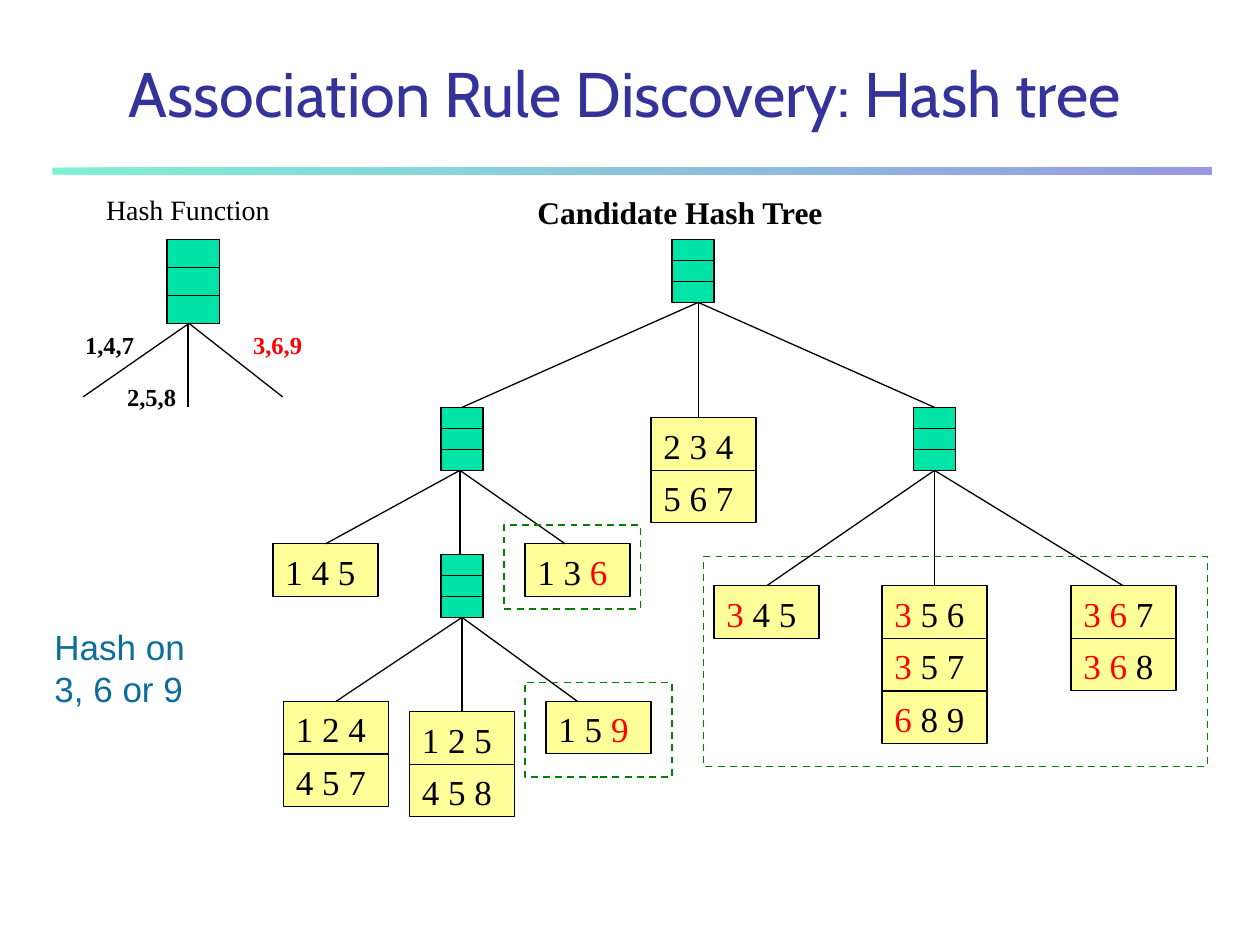
from dataclasses import dataclass
from typing import Optional

from lxml import etree
from pptx import Presentation
from pptx.dml.color import RGBColor
from pptx.enum import dml, shapes as kinds, text as txt
from pptx.oxml import ns
from pptx.util import Pt

BLACK, RED, GREEN, YELLOW = "000000", "FF0000", "00E4A8", "FFFF99"
SERIF = "Times New Roman"
TOP = 136.8  # top of the tree
ROW = 30  # height of one leaf row
UP, DOWN = 0, 2  # connection sites


@dataclass
class Node:
    x: float
    y: float
    w: float = 24
    h: float = 36


@dataclass
class Leaf:
    x: float
    y: float
    rows: list[str]  # text between asterisks is red


@dataclass
class Label:
    x: float
    y: float
    w: float
    h: float
    text: str
    size: float
    bold: bool = False
    font: str = SERIF
    ink: str = BLACK
    wrap: bool = False


@dataclass
class Link:
    start: tuple[float, float]
    end: tuple[float, float]
    head: Optional[str] = None  # box joined at its bottom
    tail: Optional[str] = None  # box joined at its top


NODES = {
    "root": Node(384, TOP),
    "left": Node(252, TOP + 96),
    "right": Node(522, TOP + 96),
    "low": Node(252, TOP + 180),
    "key": Node(95.5, TOP, 30, 48),
}
LEAVES = {
    "234": Leaf(372, TOP + 102, ["2 3 4", "5 6 7"]),
    "145": Leaf(156, TOP + 174, ["1 4 5"]),
    "136": Leaf(300, TOP + 174, ["1 3 *6*"]),
    "345": Leaf(408, TOP + 198, ["*3* 4 5"]),
    "356": Leaf(504, TOP + 198, ["*3* 5 6", "*3* 5 7", "*6* 8 9"]),
    "367": Leaf(612, TOP + 198, ["*3 6* 7", "*3 6* 8"]),
    "124": Leaf(162, TOP + 264, ["1 2 4", "4 5 7"]),
    "125": Leaf(234, TOP + 270, ["1 2 5", "4 5 8"]),
    "159": Leaf(312, TOP + 264, ["1 5 *9*"]),
}
LINKS = [
    Link((399, TOP + 36), (264, TOP + 96), tail="left"),
    Link((399, TOP + 36), (399, TOP + 102)),
    Link((399, TOP + 36), (534, TOP + 96), tail="right"),
    Link((262.8, TOP + 132), (186, TOP + 174), tail="145"),
    Link((262.8, TOP + 132), (262.8, TOP + 180)),
    Link((262.8, TOP + 132), (323, TOP + 174)),
    Link((534, TOP + 132), (438, TOP + 198), "right", "345"),
    Link((534, TOP + 132), (534, TOP + 198), "right", "356"),
    Link((534, TOP + 132), (642, TOP + 198), "right", "367"),
    Link((264, TOP + 216), (192, TOP + 264), "low", "124"),
    Link((264, TOP + 216), (264, TOP + 270), "low", "125"),
    Link((264, TOP + 216), (330, TOP + 264)),
    Link((108, TOP + 48), (47.5, 226.8)),
    Link((107.5, TOP + 48), (107.5, 232.6)),
    Link((108, TOP + 48), (161.5, 226.8)),
]
LABELS = [
    Label(41.5, 185, 42.5, 24, "1,4,7", 14, True),
    Label(65.5, 214.6, 42.5, 24, "2,5,8", 14, True),
    Label(137.5, 185, 42.5, 24, "3,6,9", 14, True, ink=RED),
    Label(53.5, 106.6, 108.7, 26.6, "Hash Function", 16),
    Label(300, 106.6, 179, 29, "Candidate Hash Tree", 18, True),
    Label(24, 354, 90, 55.4, "Hash on 3, 6 or 9", 20, font="Arial", ink="0C6D9C", wrap=True),
]
FRAMES = [(300, 390, 84, 54), (402, 318, 288, 120), (288, 300, 78, 48)]


def rgb(code: str) -> RGBColor:
    return RGBColor.from_string(code)


def style(font, name: str, size: float, ink: Optional[str] = None, bold: bool = False) -> None:
    font.name, font.size, font.bold = name, Pt(size), bold
    if ink:
        font.color.rgb = rgb(ink)


def box(x: float, y: float, w: float, h: float, fill: Optional[str] = None,
        edge: Optional[str] = BLACK, width: float = 0.75):
    rect = slide.shapes.add_shape(kinds.MSO_SHAPE.RECTANGLE, Pt(x), Pt(y), Pt(w), Pt(h))
    rect.shadow.inherit = False
    if fill:
        rect.fill.solid()
        rect.fill.fore_color.rgb = rgb(fill)
    else:
        rect.fill.background()
    if edge:
        rect.line.color.rgb = rgb(edge)
        rect.line.width = Pt(width)
    else:
        rect.line.fill.background()
    return rect


def line(start: tuple[float, float], end: tuple[float, float]):
    wire = slide.shapes.add_connector(
        kinds.MSO_CONNECTOR.STRAIGHT, *(Pt(v) for v in start + end))
    wire.line.color.rgb = rgb(BLACK)
    wire.line.width = Pt(0.75)
    etree.SubElement(wire._element.spPr, ns.qn("a:effectLst"))
    return wire


def draw_node(node: Node):
    rect = box(node.x, node.y, node.w, node.h, GREEN)
    for part in (1, 2):
        y = node.y + node.h * part / 3
        line((node.x, y), (node.x + node.w, y))
    return rect


def draw_leaf(leaf: Leaf):
    rects = []
    for i, row in enumerate(leaf.rows):
        rect = box(leaf.x, leaf.y + i * ROW, 60, ROW, YELLOW)
        frame = rect.text_frame
        frame.word_wrap = False
        frame.vertical_anchor = txt.MSO_ANCHOR.TOP
        para = frame.paragraphs[0]
        para.alignment = txt.PP_ALIGN.LEFT
        style(para.font, SERIF, 20)
        for j, part in enumerate(row.split("*")):
            if part:
                run = para.add_run()
                run.text = part
                run.font.color.rgb = rgb(RED if j % 2 else BLACK)
        rects.append(rect)
    return rects[0]


def draw_label(lab: Label) -> None:
    area = slide.shapes.add_textbox(Pt(lab.x), Pt(lab.y), Pt(lab.w), Pt(lab.h))
    area.text_frame.word_wrap = lab.wrap
    para = area.text_frame.paragraphs[0]
    para.text = lab.text
    style(para.font, lab.font, lab.size, lab.ink, lab.bold)


deck = Presentation()
deck.slide_width, deck.slide_height = Pt(720), Pt(540)
slide = deck.slides.add_slide(deck.slide_layouts[5])

# Title
title = slide.shapes.title
title.left, title.top, title.width, title.height = Pt(30), Pt(30), Pt(654), Pt(48)
title.text_frame.text = "Association Rule Discovery: Hash tree"
title.text_frame.auto_size = txt.MSO_AUTO_SIZE.NONE
title.text_frame.vertical_anchor = txt.MSO_ANCHOR.BOTTOM
head = title.text_frame.paragraphs[0]
head.alignment = txt.PP_ALIGN.CENTER
style(head.font, "Cabin", 36, "333399")

# Half-transparent gradient rule
bar = box(30, 95.8, 662.4, 4, edge=None)
bar.fill.gradient()
bar.fill.gradient_angle = 0
for stop, ink in zip(bar.fill.gradient_stops, (GREEN, "3333CC")):
    stop.color.rgb = rgb(ink)
for tint in bar._element.spPr.iter(ns.qn("a:srgbClr")):
    etree.SubElement(tint, ns.qn("a:alpha"), val="50000")

# Tree and hash function
spots = {name: draw_node(node) for name, node in NODES.items()}
spots |= {name: draw_leaf(leaf) for name, leaf in LEAVES.items()}
for link in LINKS:
    wire = line(link.start, link.end)
    if link.head:
        wire.begin_connect(spots[link.head], DOWN)
    if link.tail:
        wire.end_connect(spots[link.tail], UP)

# Labels and dashed frames
for lab in LABELS:
    draw_label(lab)
for place in FRAMES:
    box(*place, edge="008000", width=1).line.dash_style = dml.MSO_LINE.DASH

deck.save("out.pptx")
